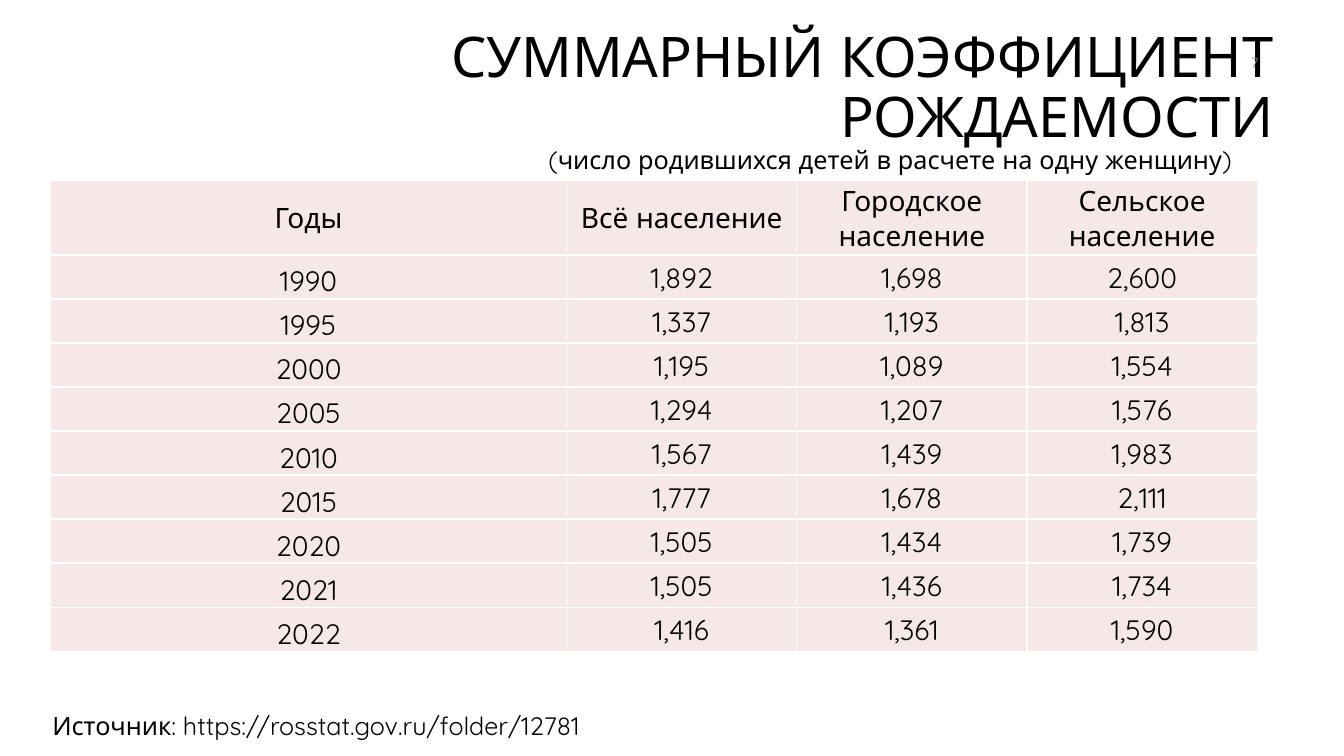
from lxml.etree import SubElement
from pptx import Presentation
from pptx.dml.color import RGBColor
from pptx.enum.text import MSO_ANCHOR as ANCHOR, PP_ALIGN as ALIGN
from pptx.oxml.ns import qn
from pptx.util import Inches, Pt

FONT = "Quicksand"
BLACK, GREY, WHITE, PINK = "000000", "8C8C8C", "FFFFFF", "F5E8E7"
HEADER = ["Годы", "Всё население", "Городское население", "Сельское население"]
RATES = [
    ["1990", "1,892", "1,698", "2,600"],
    ["1995", "1,337", "1,193", "1,813"],
    ["2000", "1,195", "1,089", "1,554"],
    ["2005", "1,294", "1,207", "1,576"],
    ["2010", "1,567", "1,439", "1,983"],
    ["2015", "1,777", "1,678", "2,111"],
    ["2020", "1,505", "1,434", "1,739"],
    ["2021", "1,505", "1,436", "1,734"],
    ["2022", "1,416", "1,361", "1,590"],
]


def rgb(value):
    """Return the colour for a hex string."""
    return RGBColor.from_string(value)


def style(p, size, color=BLACK, align=ALIGN.LEFT):
    """Set the font and alignment of a paragraph."""
    p.alignment = align
    p.font.name, p.font.size = FONT, Pt(size)
    p.font.color.rgb = rgb(color)


def add_text(s, box, text, size, color=BLACK, align=ALIGN.LEFT,
             anchor=ANCHOR.TOP, wrap=True, spacing=None):
    """Add one paragraph of text in the given box."""
    tf = s.shapes.add_textbox(*map(Inches, box)).text_frame
    tf.word_wrap, tf.vertical_anchor = wrap, anchor
    p = tf.paragraphs[0]
    p.text, p.line_spacing = text, spacing
    style(p, size, color, align)


def add_borders(cell, color, width):
    """Draw all four borders of a table cell."""
    tc_pr = cell._tc.get_or_add_tcPr()
    for side in ("a:lnL", "a:lnR", "a:lnT", "a:lnB"):
        ln = SubElement(tc_pr, qn(side), w=str(Pt(width)))
        fill = SubElement(ln, qn("a:solidFill"))
        SubElement(fill, qn("a:srgbClr"), val=color)


def fill_cell(cell, text, anchor):
    """Write and format one table cell."""
    cell.margin_left = cell.margin_right = cell.margin_top = Inches(0.01)
    cell.margin_bottom = 0
    cell.vertical_anchor = anchor
    add_borders(cell, WHITE, 1)
    cell.fill.solid()
    cell.fill.fore_color.rgb = rgb(PINK)
    p = cell.text_frame.paragraphs[0]
    p.text = text
    style(p, 20, align=ALIGN.CENTER)


def add_rates(s, box, years_width=5.12, header_height=0.74):
    """Add the table of fertility rates in the given box."""
    rows = [HEADER] + RATES
    width, height = box[2:]
    table = s.shapes.add_table(len(rows), len(HEADER), *map(Inches, box)).table
    for i, col in enumerate(table.columns):
        rest = (width - years_width) / (len(HEADER) - 1)
        col.width = Inches(rest if i else years_width)
    for i, row in enumerate(table.rows):
        rest = (height - header_height) / len(RATES)
        row.height = Inches(rest if i else header_height)
        for j, text in enumerate(rows[i]):
            is_year = i > 0 and j == 0
            fill_cell(table.cell(i, j), text, ANCHOR.BOTTOM if is_year else ANCHOR.MIDDLE)


def main():
    """Build the slide and save it."""
    prs = Presentation()
    prs.slide_width, prs.slide_height = Inches(13.33), Inches(7.5)
    s = prs.slides.add_slide(prs.slide_layouts[6])
    add_text(s, (3.31, 0.18, 9.42, 1.41), "СУММАРНЫЙ КОЭФФИЦИЕНТ РОЖДАЕМОСТИ", 40,
             align=ALIGN.RIGHT, anchor=ANCHOR.MIDDLE, spacing=0.9)
    add_rates(s, (0.5, 1.79, 11.97, 4.67))
    add_text(s, (0.42, 7, 5.65, 0.4), "Источник: https://rosstat.gov.ru/folder/12781", 18,
             wrap=False)
    add_text(s, (5.34, 1.38, 8.68, 0.4),
             "(число родившихся детей в расчете на одну женщину)", 18)
    add_text(s, (9.58, 0.42, 3, 0.4), "7", 10.5, GREY, ALIGN.RIGHT, ANCHOR.MIDDLE)
    prs.save("out.pptx")


if __name__ == "__main__":
    main()
